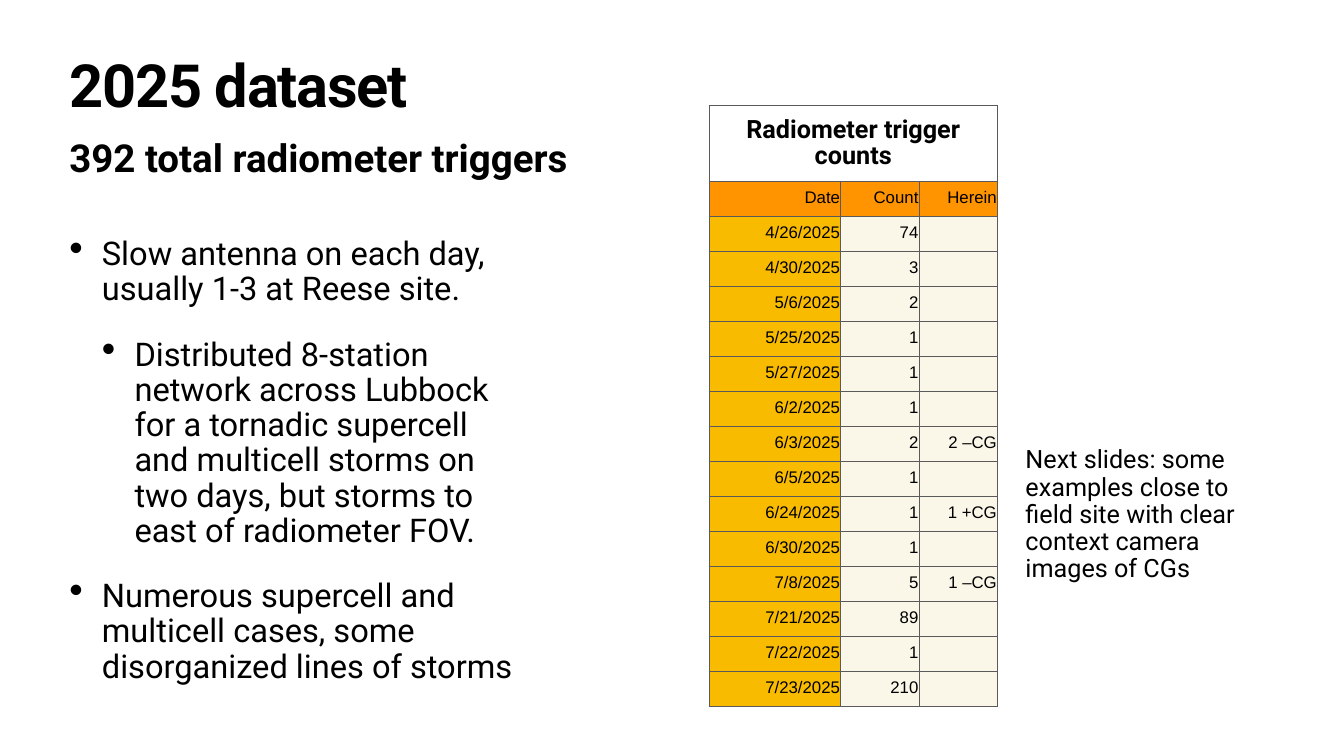
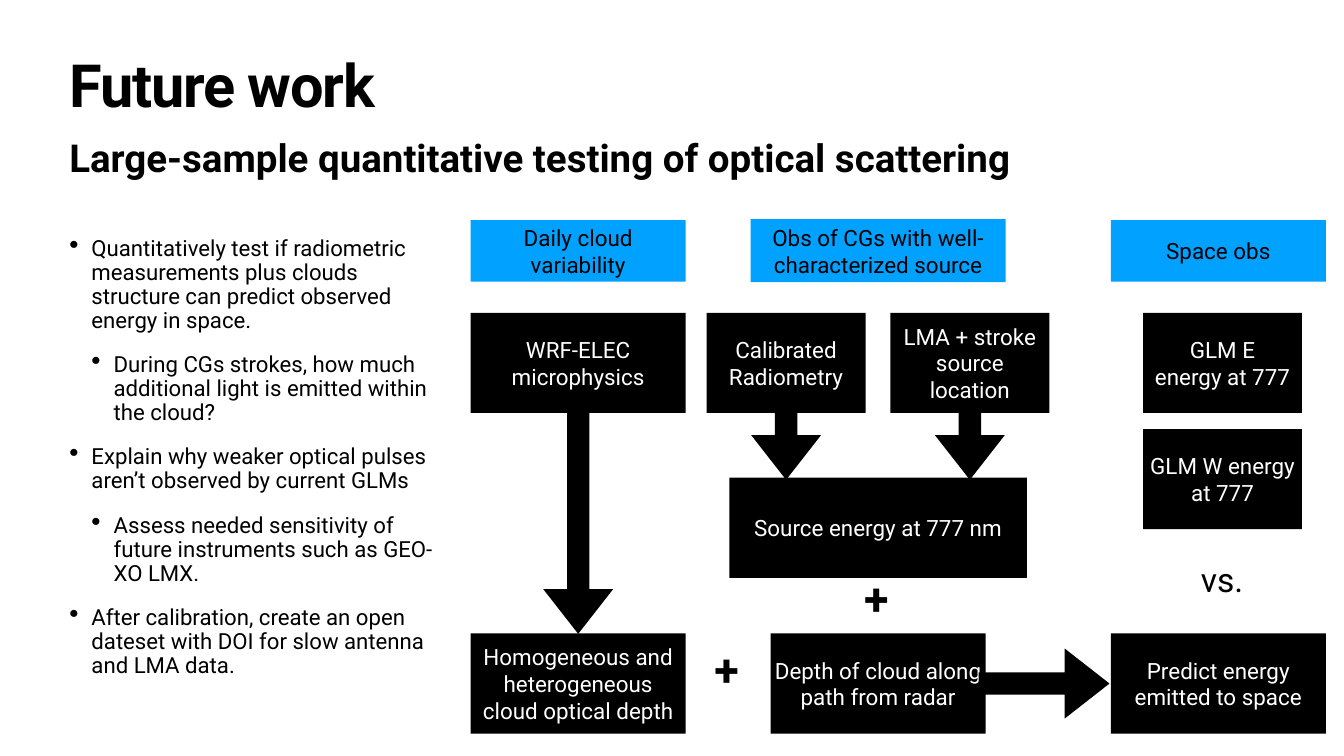
from dataclasses import dataclass

from lxml import etree
from pptx import Presentation
from pptx.dml.color import RGBColor
from pptx.enum.shapes import MSO_SHAPE
from pptx.enum.text import MSO_ANCHOR, PP_ALIGN
from pptx.oxml.ns import qn
from pptx.util import Pt

LEFT, CENTER, RIGHT = PP_ALIGN.LEFT, PP_ALIGN.CENTER, PP_ALIGN.RIGHT
TOP, MIDDLE = MSO_ANCHOR.TOP, MSO_ANCHOR.MIDDLE
RECTANGLE, ARROW = MSO_SHAPE.RECTANGLE, MSO_SHAPE.RIGHT_ARROW


@dataclass(frozen=True)
class Theme:
    font: str = "Roboto"
    table_font: str = "Arial"
    black: str = "000000"
    white: str = "FFFFFF"
    blue: str = "00A1FF"
    orange: str = "FF9400"
    amber: str = "F8BB00"
    cream: str = "FAF7E9"
    border: str = "5B5A5A"
    title: float = 85
    subtitle: float = 55
    note: float = 36
    diagram: float = 32
    cell: float = 24
    versus: float = 48
    plus: float = 64
    inset: float = 4


THEME = Theme()
SLIDE_SIZE = 1920, 1080
MARGIN = 95
BOX_HEIGHT, WIDE, NARROW = 143, 307, 227
ARROW_BREADTH = 100

TRIGGERS = [
    ("4/26/2025", "74", ""),
    ("4/30/2025", "3", ""),
    ("5/6/2025", "2", ""),
    ("5/25/2025", "1", ""),
    ("5/27/2025", "1", ""),
    ("6/2/2025", "1", ""),
    ("6/3/2025", "2", "2 –CG"),
    ("6/5/2025", "1", ""),
    ("6/24/2025", "1", "1 +CG"),
    ("6/30/2025", "1", ""),
    ("7/8/2025", "5", "1 –CG"),
    ("7/21/2025", "89", ""),
    ("7/22/2025", "1", ""),
    ("7/23/2025", "210", ""),
]

DATASET_POINTS = [
    (0, "Slow antenna on each day, usually 1-3 at Reese site."),
    (1, "Distributed 8-station network across Lubbock for a tornadic supercell and "
        "multicell storms on two days, but storms to east of radiometer FOV."),
    (0, "Numerous supercell and multicell cases, some disorganized lines of storms"),
]

FUTURE_POINTS = [
    (0, "Quantitatively test if radiometric measurements plus clouds structure can "
        "predict observed energy in space."),
    (1, "During CGs strokes, how much additional light is emitted within the cloud?"),
    (0, "Explain why weaker optical pulses aren’t observed by current GLMs"),
    (1, "Assess needed sensitivity of future instruments such as GEO-XO LMX."),
    (0, "After calibration, create an open dateset with DOI for slow antenna and LMA data."),
]


def style(paragraph, size, color=THEME.black, bold=False, align=LEFT, spacing=1.0,
          font=THEME.font):
    paragraph.alignment = align
    paragraph.line_spacing = spacing
    paragraph.font.name = font
    paragraph.font.size = Pt(size)
    paragraph.font.bold = bold
    paragraph.font.color.rgb = RGBColor.from_string(color)


def set_margins(holder, inset):
    holder.margin_left = holder.margin_right = Pt(inset)
    holder.margin_top = holder.margin_bottom = Pt(inset)


def write(frame, text, size, **look):
    """Write one paragraph for each line of text."""
    for index, line in enumerate(text.split("\n")):
        paragraph = frame.add_paragraph() if index else frame.paragraphs[0]
        paragraph.add_run().text = line
        style(paragraph, size, **look)


def add_frame(slide, left, top, width, height, anchor=TOP, wrap=True):
    box = slide.shapes.add_textbox(Pt(left), Pt(top), Pt(width), Pt(height))
    frame = box.text_frame
    frame.word_wrap = wrap
    frame.vertical_anchor = anchor
    set_margins(frame, THEME.inset)
    return frame


def add_heading(slide, title, subtitle):
    frame = add_frame(slide, MARGIN, 85, 1730, 113)
    write(frame, title, THEME.title, bold=True, spacing=0.8)
    frame.paragraphs[0].runs[0]._r.get_or_add_rPr().set("spc", "-170")
    write(add_frame(slide, MARGIN, 187, 1730, 73), subtitle, THEME.subtitle, bold=True)


def add_bullets(slide, points, width, size, indent, gap):
    frame = add_frame(slide, MARGIN, 335, width, 650)
    for index, (level, text) in enumerate(points):
        paragraph = frame.add_paragraph() if index else frame.paragraphs[0]
        paragraph.add_run().text = text
        paragraph.level = level
        props = paragraph._p.get_or_add_pPr()
        props.set("marL", str(Pt(indent * (level + 1))))
        props.set("indent", str(-Pt(indent)))
        etree.SubElement(props, qn("a:buSzPct"), val="123000")
        etree.SubElement(props, qn("a:buChar"), char="•")
        if index:
            paragraph.space_before = Pt(gap)
        style(paragraph, size, spacing=0.9)


def add_borders(cell):
    props = cell._tc.get_or_add_tcPr()
    for side in ("lnL", "lnR", "lnT", "lnB"):
        line = etree.SubElement(props, qn(f"a:{side}"), w=str(Pt(1)))
        fill = etree.SubElement(line, qn("a:solidFill"))
        etree.SubElement(fill, qn("a:srgbClr"), val=THEME.border)


def fill_cell(cell, text, color):
    cell.vertical_anchor = MIDDLE
    set_margins(cell, 1)
    cell.fill.solid()
    cell.fill.fore_color.rgb = RGBColor.from_string(color)
    write(cell.text_frame, text, THEME.cell, align=RIGHT, spacing=0.9,
          font=THEME.table_font)


def add_trigger_table(slide):
    rows = [("Date", "Count", "Herein"), *TRIGGERS]
    widths = [188, 112, 112]
    heights = [108] + [50] * len(rows)
    table = slide.shapes.add_table(len(heights), len(widths), Pt(1013), Pt(151),
                                   Pt(sum(widths)), Pt(sum(heights))).table
    table.first_row = table.horz_banding = False
    for column, width in zip(table.columns, widths):
        column.width = Pt(width)
    for row, height in zip(table.rows, heights):
        row.height = Pt(height)
    for cell in (cell for row in table.rows for cell in row.cells):
        add_borders(cell)

    caption = table.cell(0, 0)
    caption.merge(table.cell(0, len(widths) - 1))
    caption.fill.background()
    caption.vertical_anchor = MIDDLE
    set_margins(caption, THEME.inset)
    write(caption.text_frame, "Radiometer trigger counts", THEME.note, bold=True,
          align=CENTER, spacing=0.9)

    for r, values in enumerate(rows, start=1):
        colors = [THEME.amber, THEME.cream, THEME.cream] if r > 1 else [THEME.orange] * 3
        for c, (value, color) in enumerate(zip(values, colors)):
            fill_cell(table.cell(r, c), value, color)


def add_solid(slide, kind, left, top, width, height, color):
    shape = slide.shapes.add_shape(kind, Pt(left), Pt(top), Pt(width), Pt(height))
    shape.shadow.inherit = False
    shape.fill.solid()
    shape.fill.fore_color.rgb = RGBColor.from_string(color)
    shape.line.fill.background()
    return shape


def add_box(slide, text, center, top, width, height=BOX_HEIGHT, fill=THEME.black,
            color=THEME.white):
    box = add_solid(slide, RECTANGLE, center - width / 2, top, width, height, fill)
    frame = box.text_frame
    frame.word_wrap = True
    frame.vertical_anchor = MIDDLE
    set_margins(frame, THEME.inset)
    write(frame, text, THEME.diagram, color=color, align=CENTER)


def add_arrow(slide, left, top, length):
    arrow = add_solid(slide, ARROW, left, top, length, ARROW_BREADTH, THEME.black)
    arrow.adjustments[0] = 0.32
    arrow.adjustments[1] = 0.64
    return arrow


def add_down_arrow(slide, center, top, length):
    middle = top + length / 2
    arrow = add_arrow(slide, center - length / 2, middle - ARROW_BREADTH / 2, length)
    arrow.rotation = 90


def add_sign(slide, text, left, top, width, height, size, bold=False):
    frame = add_frame(slide, left, top, width, height, MIDDLE, wrap=False)
    write(frame, text, size, bold=bold, spacing=0.9)


def build_dataset(slide):
    add_heading(slide, "2025 dataset", "392 total radiometer triggers")
    add_bullets(slide, DATASET_POINTS, width=648, size=46.6, indent=46.6, gap=43)
    add_trigger_table(slide)
    note = add_frame(slide, 1461, 633.5, 321, 205, MIDDLE)
    write(note, "Next slides: some examples close to field site with clear context "
                "camera images of CGs", THEME.note, spacing=0.9)


def build_future_work(slide):
    add_heading(slide, "Future work",
                "Large-sample quantitative testing of optical scattering")
    add_bullets(slide, FUTURE_POINTS, width=531, size=31.7, indent=31.7, gap=29)

    cloud, source, space, glm = 826, 1254.5, 1740.5, 1746.5
    radiometry, location = 1123, 1385.5
    inputs, glm_west, energy, results = 447, 613, 682.5, 905

    for text, center, top, width, height in [
        ("Daily cloud variability", cloud, 314.5, WIDE, 88),
        ("Obs of CGs with well-characterized source", source, 313, 364, 90),
        ("Space obs", space, 314.5, WIDE, 88),
    ]:
        add_box(slide, text, center, top, width, height, THEME.blue, THEME.black)

    for text, center, top, width in [
        ("WRF-ELEC\nmicrophysics", cloud, inputs, WIDE),
        ("Calibrated\nRadiometry", radiometry, inputs, NARROW),
        ("LMA + stroke source location", location, inputs, NARROW),
        ("GLM E\nenergy at 777", glm, inputs, NARROW),
        ("GLM W energy at 777", glm, glm_west, NARROW),
        ("Source energy at 777 nm", source, energy, 425),
        ("Homogeneous and heterogeneous cloud optical depth", cloud, results, WIDE),
        ("Depth of cloud along path from radar", source, results, WIDE),
        ("Predict energy emitted to space", space, results, WIDE),
    ]:
        add_box(slide, text, center, top, width)

    for center, length in [(cloud, 320), (radiometry, 100), (location, 100)]:
        add_down_arrow(slide, center, 585.5, length)
    add_arrow(slide, 1398, 926.5, 187)

    add_sign(slide, "vs.", 1711.5, 799, 70.5, 63.5, THEME.versus)
    for left, top in [(1016.5, 918), (1230.5, 816)]:
        add_sign(slide, "+", left, top, 47.5, 84, THEME.plus, bold=True)


def main():
    deck = Presentation()
    deck.slide_width, deck.slide_height = map(Pt, SLIDE_SIZE)
    blank = deck.slide_layouts[6]
    for build in (build_dataset, build_future_work):
        build(deck.slides.add_slide(blank))
    deck.save("out.pptx")


if __name__ == "__main__":
    main()
